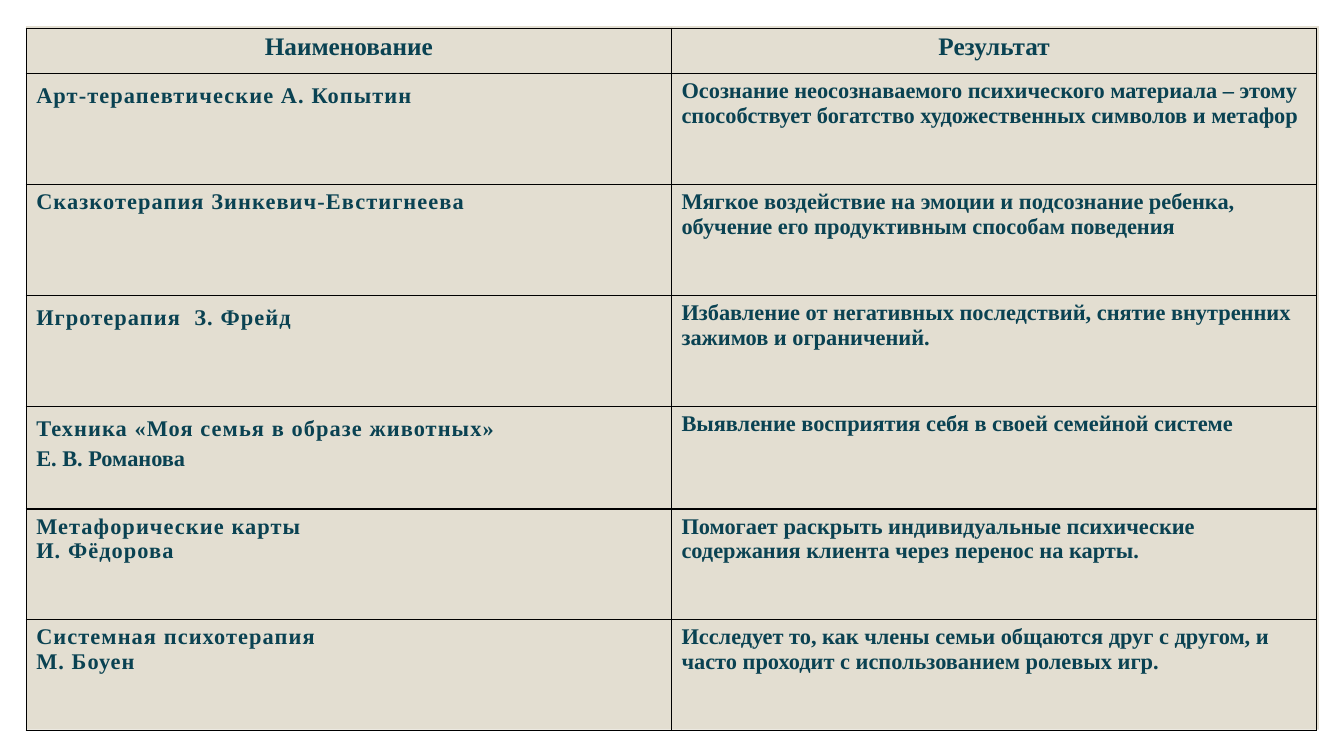
import pptx
import pptx.dml.color
import pptx.enum.shapes
import pptx.enum.text
import pptx.util
from pptx.oxml import parse_xml
from pptx.oxml.ns import nsdecls

Inches, Pt = pptx.util.Inches, pptx.util.Pt
ALIGN = pptx.enum.text.PP_ALIGN

# Content: (text, line spacing, letter spacing) for each left line, then the result
HEADS = ["Наименование", "Результат"]
ROWS = [
    ([("Арт-терапевтические А. Копытин", 1.2, 0.8)],
     "Осознание неосознаваемого психического материала – этому "
     "способствует богатство художественных символов и метафор"),
    ([("Сказкотерапия Зинкевич-Евстигнеева", 1, 0.8)],
     "Мягкое воздействие на эмоции и подсознание ребенка, "
     "обучение его продуктивным способам поведения"),
    ([("Игротерапия  З. Фрейд", 1.2, 0.8)],
     "Избавление от негативных последствий, снятие внутренних "
     "зажимов и ограничений."),
    ([("Техника «Моя семья в образе животных»", 1.2, 0.8),
      ("Е. В. Романова", 1.2, 0)],
     "Выявление восприятия себя в своей семейной системе"),
    ([("Метафорические карты", 1, 0.8), ("И. Фёдорова", 1, 0.8)],
     "Помогает раскрыть индивидуальные психические "
     "содержания клиента через перенос на карты."),
    ([("Системная психотерапия", 1, 0.8), ("М. Боуен", 1, 0.8)],
     "Исследует то, как члены семьи общаются друг с другом, и "
     "часто проходит с использованием ролевых игр."),
]
HIGH = [0.45, 1.1, 1.1, 1.1, 1.02, 1.1, 1.1]
WIDE = 6.4
INK, SAND, LINE = "0A4252", "E3DED1", "000000"


def color(code):
    return pptx.dml.color.RGBColor.from_string(code)


def write(para, text, size=16, align=ALIGN.LEFT, lead=1, track=0):
    para.alignment = align
    para.line_spacing = lead
    run = para.add_run()
    run.text = text
    font = run.font
    font.name, font.size, font.bold = "Times New Roman", Pt(size), True
    font.color.rgb = color(INK)
    if track:
        run._r.get_or_add_rPr().set("spc", str(round(track * 100)))


def frame(cell):
    cell.fill.background()
    props = cell._tc.get_or_add_tcPr()
    for spot, side in enumerate("LRTB"):
        props.insert(spot, parse_xml(
            f'<a:ln{side} {nsdecls("a")} w="{Pt(1)}"><a:solidFill>'
            f'<a:srgbClr val="{LINE}"/></a:solidFill></a:ln{side}>'))


deck = pptx.Presentation()
deck.slide_width, deck.slide_height = Inches(13.33), Inches(7.5)
slide = deck.slides.add_slide(deck.slide_layouts[6])

# Sand panel behind the table
panel = slide.shapes.add_shape(
    pptx.enum.shapes.MSO_SHAPE.RECTANGLE,
    Inches(0.26), Inches(0.26), Inches(12.82), Inches(6.98))
panel.shadow.inherit = False
panel.fill.solid()
panel.fill.fore_color.rgb = color(SAND)
panel.line.fill.background()

# Table grid
table = slide.shapes.add_table(
    len(HIGH), len(HEADS), Inches(0.26), Inches(0.28),
    Inches(WIDE * len(HEADS)), Inches(sum(HIGH))).table
table.horz_banding = False
for col in table.columns:
    col.width = Inches(WIDE)
for row, high in zip(table.rows, HIGH):
    row.height = Inches(high)
for cell in table.iter_cells():
    frame(cell)

# Table text
for col, head in enumerate(HEADS):
    write(table.cell(0, col).text_frame.paragraphs[0], head,
          size=18, align=ALIGN.CENTER)
for row, (names, result) in enumerate(ROWS, 1):
    body = table.cell(row, 0).text_frame
    for num, (text, lead, track) in enumerate(names):
        para = body.add_paragraph() if num else body.paragraphs[0]
        write(para, text, lead=lead, track=track)
    write(table.cell(row, 1).text_frame.paragraphs[0], result)

deck.save("out.pptx")
